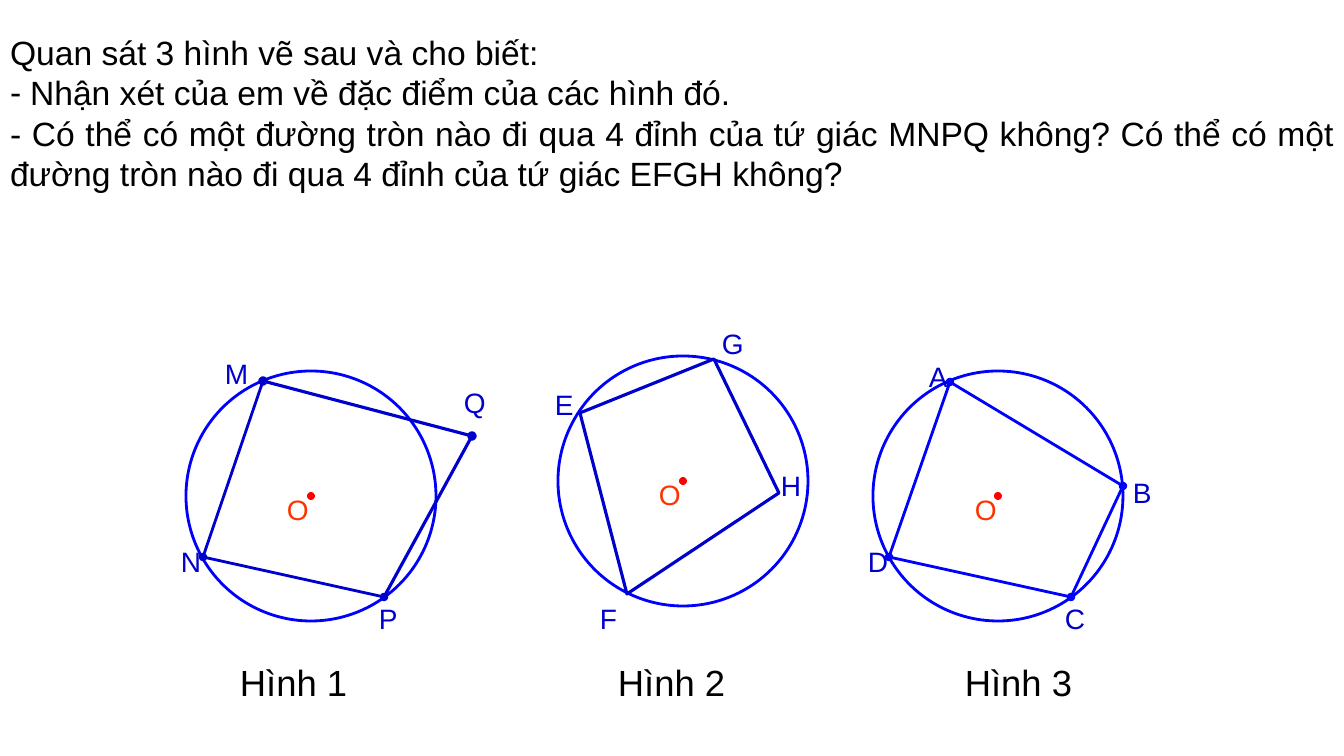
from pptx import Presentation
from pptx.dml.color import RGBColor
from pptx.enum.shapes import MSO_CONNECTOR as CONN, MSO_SHAPE as SHAPE
from pptx.enum.text import MSO_ANCHOR as ANCHOR, MSO_AUTO_SIZE as FIT, PP_ALIGN as ALIGN
from pptx.oxml.ns import qn
from pptx.util import Pt
from lxml.etree import SubElement

BLACK = RGBColor(0, 0, 0)
BLUE = RGBColor(0, 0, 0xFF)
NAVY = RGBColor(0, 0, 0xCC)
RED = RGBColor(0xFF, 0, 0)
ORANGE = RGBColor(0xFF, 0x33, 0)

QUESTIONS = [
    ("Quan sát 3 hình vẽ sau và cho biết:", False),
    ("Nhận xét của em về đặc điểm của các hình đó.", True),
    ("- Có thể có một đường tròn nào đi qua 4 đỉnh của tứ giác MNPQ không? "
     "Có thể có một đường tròn nào đi qua 4 đỉnh của tứ giác EFGH không?", False),
]
FIGURES = [
    dict(caption=("Hình 1", 230), center=(311, 496), o_label=(277, 488), line=NAVY,
         vertices=dict(M=(263, 381), N=(203, 557), P=(384, 597), Q=(472, 436)),
         labels=dict(M=(215, 352), N=(171, 540), P=(369, 597), Q=(454, 381)),
         edges=[("MN", 2, False), ("NP", 2, True), ("MQ", 2.25, True), ("PQ", 2.25, False)]),
    dict(caption=("Hình 2", 608), center=(683, 481), o_label=(649, 473), line=NAVY,
         vertices=dict(E=(580, 413), F=(627, 594), H=(779, 493), G=(714, 359)),
         labels=dict(E=(545, 383), F=(590, 597), H=(771, 464), G=(712, 322)),
         edges=[]),
    dict(caption=("Hình 3", 955), center=(998, 496), o_label=(965, 488), line=BLUE,
         vertices=dict(A=(950, 382), B=(1123, 486), C=(1071, 597), D=(889, 557)),
         labels=dict(A=(919, 355), B=(1123, 471), C=(1055, 597), D=(858, 540)),
         edges=[("AD", 2, False), ("AB", 2, True), ("DC", 2, True), ("BC", 2, False)]),
]
WIDTH, HEIGHT = 1344, 756
RADIUS, DOT_RADIUS = 125, 4
LABEL_SIZE, CAPTION_SIZE = (41, 43), (128, 53)
CAPTION_TOP = 655
BULLET_INDENT = 20
SCALE = 12192000 / WIDTH


def px(*values):
    """Turn pixel lengths into EMU."""
    return [round(v * SCALE) for v in values]


def style(p, size, color):
    """Format every run of a paragraph."""
    for r in p.runs:
        r.font.name, r.font.size = "Arial", Pt(size)
        r.font.color.rgb = color


def add_label(shapes, text, at, box, size, color):
    """Add a one-line label."""
    tf = shapes.add_textbox(*px(*at, *box)).text_frame
    tf.text = text
    tf.word_wrap, tf.auto_size = False, FIT.SHAPE_TO_FIT_TEXT
    style(tf.paragraphs[0], size, color)


def add_circle(shapes, center, radius):
    """Add a circle around its centre."""
    x, y = center
    s = shapes.add_shape(SHAPE.OVAL, *px(x - radius, y - radius, 2 * radius, 2 * radius))
    s.shadow.inherit = False
    return s


def add_edge(shapes, start, end, color, width, dotted):
    """Add one side of a quadrilateral."""
    c = shapes.add_connector(CONN.STRAIGHT, *px(*start, *end))
    c.line.color.rgb, c.line.width = color, Pt(width)
    if dotted:
        for tag in ("a:headEnd", "a:tailEnd"):
            SubElement(c.line._get_or_add_ln(), qn(tag), type="oval")
    SubElement(c._element.spPr, qn("a:effectLst"))


def add_outline(shapes, points, color):
    """Add a closed quadrilateral."""
    builder = shapes.build_freeform(*points[0], scale=SCALE)
    builder.add_line_segments(points[1:], close=True)
    s = builder.convert_to_shape()
    s.shadow.inherit = False
    s.fill.background()
    s.line.color.rgb, s.line.width = color, Pt(2.25)


def add_figure(slide, fig):
    """Add a circle with its quadrilateral, labels and caption."""
    shapes = slide.shapes.add_group_shape().shapes
    circle = add_circle(shapes, fig["center"], RADIUS)
    circle.fill.background()
    circle.line.color.rgb, circle.line.width = BLUE, Pt(2)
    vertices = fig["vertices"]
    for (a, b), width, dotted in fig["edges"]:
        add_edge(shapes, vertices[a], vertices[b], fig["line"], width, dotted)
    if not fig["edges"]:
        add_outline(shapes, list(vertices.values()), fig["line"])
    dot = add_circle(shapes, fig["center"], DOT_RADIUS)
    dot.fill.solid()
    dot.fill.fore_color.rgb = RED
    dot.line.fill.background()
    for name, at in fig["labels"].items():
        add_label(shapes, name, at, LABEL_SIZE, 20, NAVY)
    add_label(shapes, "O", fig["o_label"], LABEL_SIZE, 20, ORANGE)
    text, left = fig["caption"]
    add_label(shapes, text, (left, CAPTION_TOP), CAPTION_SIZE, 26, BLACK)


def add_questions(slide):
    """Fill the body placeholder with the questions."""
    body = slide.placeholders[1]
    body.left, body.top, body.width, body.height = px(0, 27, WIDTH, 173)
    tf = body.text_frame
    tf.word_wrap, tf.auto_size, tf.vertical_anchor = True, FIT.NONE, ANCHOR.TOP
    for i, (text, bulleted) in enumerate(QUESTIONS):
        p = tf.add_paragraph() if i else tf.paragraphs[0]
        p.text, p.alignment = text, ALIGN.JUSTIFY
        p.space_before = Pt(0)
        style(p, 24, BLACK)
        pPr = p._p.get_or_add_pPr()
        indent = px(BULLET_INDENT)[0] if bulleted else 0
        pPr.set("marL", str(indent))
        pPr.set("indent", str(-indent))
        if bulleted:
            SubElement(pPr, qn("a:buChar"), char="-")
        else:
            SubElement(pPr, qn("a:buNone"))


def main():
    """Build the slide."""
    prs = Presentation()
    prs.slide_width, prs.slide_height = px(WIDTH, HEIGHT)
    slide = prs.slides.add_slide(prs.slide_layouts[1])
    title = slide.shapes.title._element
    title.getparent().remove(title)
    add_questions(slide)
    for fig in FIGURES:
        add_figure(slide, fig)
    prs.save("out.pptx")


if __name__ == "__main__":
    main()
